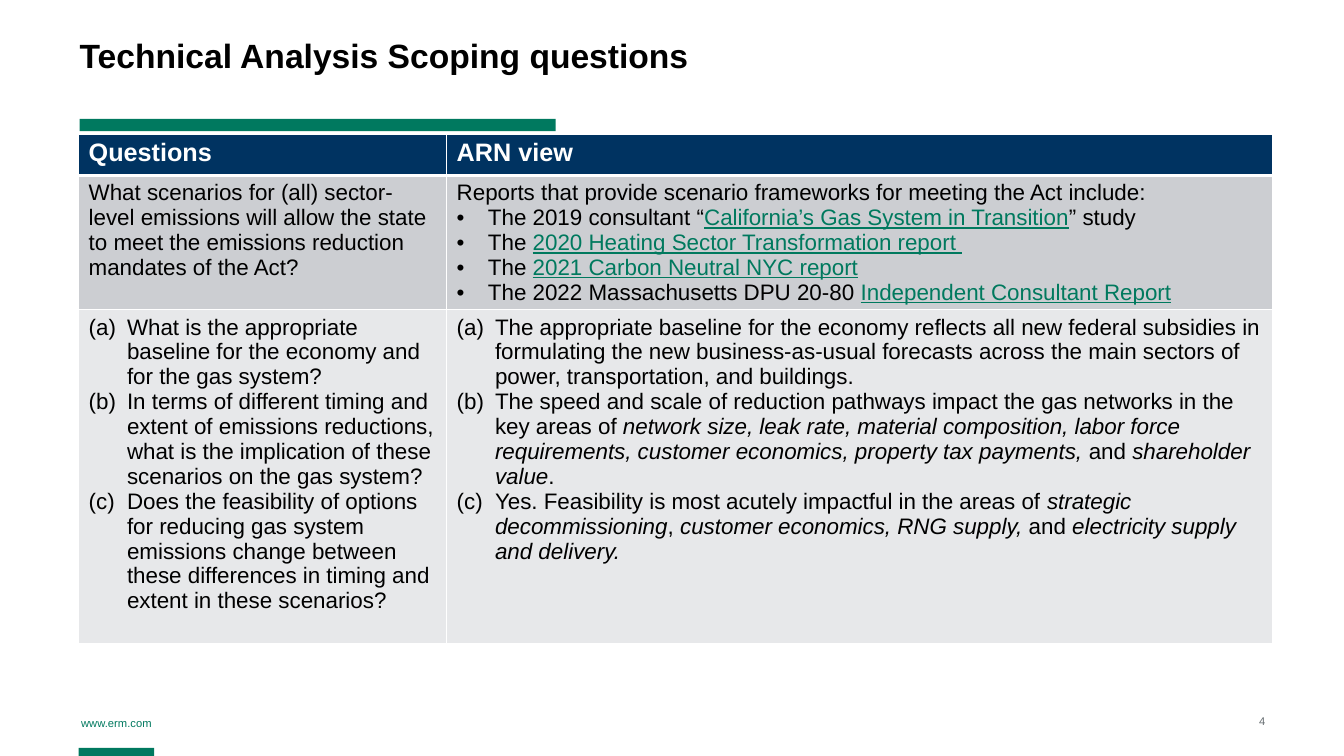
"""Builds the technical analysis scoping questions slide."""
from lxml import etree
from pptx import Presentation
from pptx.dml.color import RGBColor
from pptx.enum.shapes import MSO_SHAPE
from pptx.enum.text import MSO_ANCHOR, MSO_AUTO_SIZE, PP_ALIGN
from pptx.oxml.ns import qn
from pptx.util import Inches, Pt

RECTANGLE = MSO_SHAPE.RECTANGLE
TOP, BOTTOM = MSO_ANCHOR.TOP, MSO_ANCHOR.BOTTOM
LEFT, CENTER, RIGHT = PP_ALIGN.LEFT, PP_ALIGN.CENTER, PP_ALIGN.RIGHT
NO_AUTOFIT = MSO_AUTO_SIZE.NONE

GREEN = RGBColor(0x00, 0x79, 0x5F)
LINK_GREEN = RGBColor(0x00, 0x79, 0x5E)
NAVY = RGBColor(0x00, 0x33, 0x61)
GREY = RGBColor(0x66, 0x6D, 0x71)
MID_GREY = RGBColor(0xCC, 0xCE, 0xD2)
PALE_GREY = RGBColor(0xE7, 0xE8, 0xEA)
BLACK = RGBColor(0x00, 0x00, 0x00)
WHITE = RGBColor(0xFF, 0xFF, 0xFF)

PLAIN, LINK, ITALIC = "plain", "link", "italic"
BULLET, LETTER = "bullet", "letter"
MARKERS = {
    BULLET: (0.31, "a:buChar", {"char": "•"}),
    LETTER: (0.38, "a:buAutoNum", {"type": "alphaLcParenBoth"}),
}

HEADINGS = ["Questions", "ARN view"]
SCENARIO_QUESTION = [
    (None, [("What scenarios for (all) sector-level emissions will allow the state "
             "to meet the emissions reduction mandates of the Act?", PLAIN)]),
]
SCENARIO_VIEW = [
    (None, [("Reports that provide scenario frameworks for meeting the Act include:", PLAIN)]),
    (BULLET, [("The 2019 consultant “", PLAIN),
              ("California’s Gas System in Transition", LINK), ("” study", PLAIN)]),
    (BULLET, [("The ", PLAIN), ("2020 Heating Sector Transformation report ", LINK)]),
    (BULLET, [("The ", PLAIN), ("2021 Carbon Neutral NYC report", LINK)]),
    (BULLET, [("The 2022 Massachusetts DPU 20-80 ", PLAIN),
              ("Independent Consultant Report", LINK)]),
]
SYSTEM_QUESTIONS = [
    (LETTER, [("What is the appropriate baseline for the economy and for the gas system?", PLAIN)]),
    (LETTER, [("In terms of different timing and extent of emissions reductions, what is "
               "the implication of these scenarios on the gas system?", PLAIN)]),
    (LETTER, [("Does the feasibility of options for reducing gas system emissions change "
               "between these differences in timing and extent in these scenarios?", PLAIN)]),
]
SYSTEM_VIEW = [
    (LETTER, [("The appropriate baseline for the economy reflects all new federal subsidies "
               "in formulating the new business-as-usual forecasts across the main sectors "
               "of power, transportation, and buildings.", PLAIN)]),
    (LETTER, [("The speed and scale of reduction pathways impact the gas networks in the "
               "key areas of ", PLAIN),
              ("network size, leak rate, material composition, labor force requirements, "
               "customer economics, property tax payments, ", ITALIC),
              ("and", PLAIN), (" shareholder value", ITALIC), (".", PLAIN)]),
    (LETTER, [("Yes. Feasibility is most acutely impactful in the areas of ", PLAIN),
              ("strategic decommissioning", ITALIC), (", ", PLAIN),
              ("customer economics, RNG supply, ", ITALIC), ("and ", PLAIN),
              ("electricity supply and delivery.", ITALIC)]),
]
BODY_ROWS = [
    (MID_GREY, [SCENARIO_QUESTION, SCENARIO_VIEW]),
    (PALE_GREY, [SYSTEM_QUESTIONS, SYSTEM_VIEW]),
]


class ScopingSlide:
    """Holds the slide and its text style."""

    font_name = "Arial"

    def __init__(self, deck):
        self.slide = deck.slides.add_slide(deck.slide_layouts[5])

    def style(self, run, size, color, bold=False):
        font = run.font
        font.name, font.size, font.bold = self.font_name, Pt(size), bold
        font.color.rgb = color

    def fill_frame(self, frame, text, size, color, align, anchor, bold=False):
        frame.margin_left = frame.margin_right = 0
        frame.margin_top = frame.margin_bottom = 0
        frame.word_wrap = True
        frame.auto_size = NO_AUTOFIT
        frame.vertical_anchor = anchor
        frame.text = text
        paragraph = frame.paragraphs[0]
        paragraph.alignment = align
        self.style(paragraph.runs[0], size, color, bold)
        return paragraph

    def title(self, text, left, top, width, height):
        heading = self.slide.shapes.title
        heading.left, heading.top = Inches(left), Inches(top)
        heading.width, heading.height = Inches(width), Inches(height)
        paragraph = self.fill_frame(heading.text_frame, text, 24, BLACK, LEFT, TOP, bold=True)
        paragraph.line_spacing = 0.9

    def label(self, text, left, top, width, height, color, align, anchor):
        box = self.slide.shapes.add_textbox(
            Inches(left), Inches(top), Inches(width), Inches(height))
        self.fill_frame(box.text_frame, text, 8, color, align, anchor)

    def bar(self, left, top, width, height):
        bar = self.slide.shapes.add_shape(
            RECTANGLE, Inches(left), Inches(top), Inches(width), Inches(height))
        bar.shadow.inherit = False
        bar.fill.solid()
        bar.fill.fore_color.rgb = GREEN
        bar.line.fill.background()

    def table(self, left, top, widths, heights):
        table = self.slide.shapes.add_table(
            len(heights), len(widths), Inches(left), Inches(top),
            Inches(sum(widths)), Inches(sum(heights))).table
        for column, width in zip(table.columns, widths):
            column.width = Inches(width)
        for row, height in zip(table.rows, heights):
            row.height = Inches(height)
        return table

    def cell(self, cell, paragraphs, fill, size, color, bold=False, top=1, bottom=1):
        cell.fill.solid()
        cell.fill.fore_color.rgb = fill
        self.borders(cell, {"L": 1, "R": 1, "T": top, "B": bottom})
        frame = cell.text_frame
        for index, (marker, pieces) in enumerate(paragraphs):
            paragraph = frame.add_paragraph() if index else frame.paragraphs[0]
            if marker:
                self.marker(paragraph, marker)
            for text, kind in pieces:
                run = paragraph.add_run()
                run.text = text
                self.style(run, size, LINK_GREEN if kind == LINK else color, bold)
                run.font.underline = kind == LINK
                run.font.italic = kind == ITALIC

    def marker(self, paragraph, kind):
        indent, tag, attributes = MARKERS[kind]
        properties = paragraph._p.get_or_add_pPr()
        properties.set("marL", str(Inches(indent)))
        properties.set("indent", str(-Inches(indent)))
        etree.SubElement(properties, qn("a:buFont"), typeface=self.font_name)
        etree.SubElement(properties, qn(tag), **attributes)

    def borders(self, cell, weights):
        properties = cell._tc.get_or_add_tcPr()
        for index, (side, weight) in enumerate(weights.items()):
            line = etree.Element(qn(f"a:ln{side}"), w=str(Pt(weight)))
            solid = etree.SubElement(line, qn("a:solidFill"))
            etree.SubElement(solid, qn("a:srgbClr"), val=str(WHITE))
            properties.insert(index, line)


def main():
    deck = Presentation()
    deck.slide_width, deck.slide_height = Inches(13.33), Inches(7.5)
    page = ScopingSlide(deck)

    page.title("Technical Analysis Scoping questions", 0.79, 0.39, 10.3, 0.79)
    page.bar(0.79, 1.18, 4.72, 0.12)
    page.bar(0.78, 7.42, 0.75, 0.08)
    page.label("www.erm.com", 0.78, 7.11, 0.75, 0.13, GREEN, CENTER, TOP)
    page.label("4", 12.25, 7.09, 0.3, 0.13, GREY, RIGHT, BOTTOM)

    questions = page.table(0.78, 1.33, [3.65, 8.19], [0.41, 1.33, 3.31])
    for column, heading in enumerate(HEADINGS):
        page.cell(questions.cell(0, column), [(None, [(heading, PLAIN)])],
                  NAVY, 18, WHITE, bold=True, bottom=3)
    for row, (fill, contents) in enumerate(BODY_ROWS, start=1):
        for column, paragraphs in enumerate(contents):
            page.cell(questions.cell(row, column), paragraphs, fill, 16, BLACK,
                      top=3 if row == 1 else 1)

    deck.save("out.pptx")


if __name__ == "__main__":
    main()
